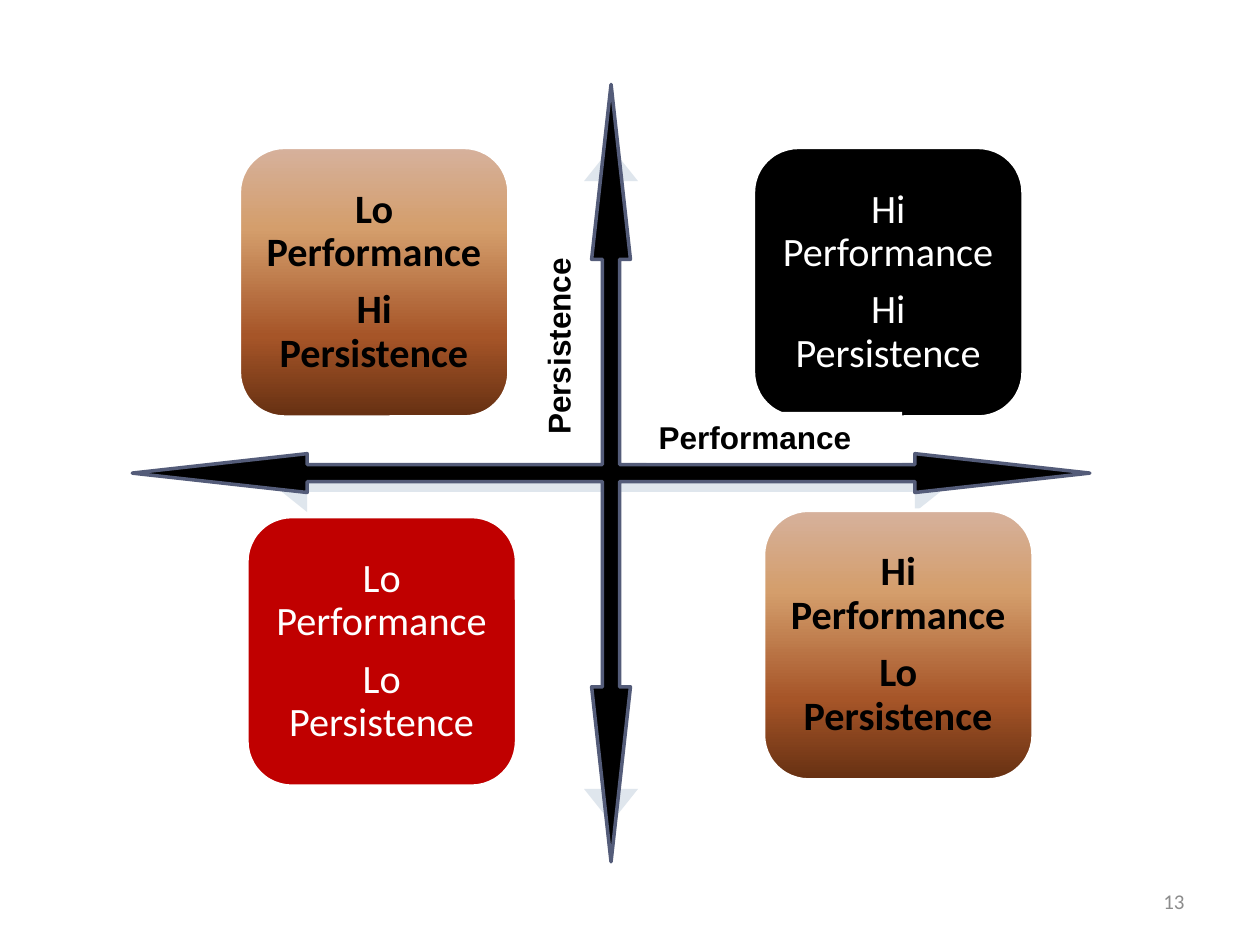
import pptx
import pptx.util
import pptx.dml.color
import pptx.enum.shapes
import pptx.enum.text
import pptx.oxml
import pptx.oxml.ns

COLS, ROWS = 100, 75
WIDTH, HEIGHT = pptx.util.Inches(10), pptx.util.Inches(7.5)
CARD = 21.4
BRONZE = [(0, "D6B19C"), (30, "D49E6C"), (70, "A65528"), (100, "663012")]
SHAPE = pptx.enum.shapes.MSO_SHAPE
ALIGN = pptx.enum.text.PP_ALIGN
ANCHOR = pptx.enum.text.MSO_ANCHOR


def rgb(value):
    return pptx.dml.color.RGBColor.from_string(value)


def place(col, row, cols, rows):
    return (round(col * WIDTH / COLS), round(row * HEIGHT / ROWS),
            round(cols * WIDTH / COLS), round(rows * HEIGHT / ROWS))


def fill_gradient(sp, stops):
    sp.fill.gradient()
    sp.fill.gradient_angle = 270
    gs_list = sp._element.spPr.find(".//" + pptx.oxml.ns.qn("a:gsLst"))
    for gs in list(gs_list):
        gs_list.remove(gs)
    for position, color in stops:
        gs_list.append(pptx.oxml.parse_xml(
            f'<a:gs {pptx.oxml.ns.nsdecls("a")} pos="{position * 1000}">'
            f'<a:srgbClr val="{color}"/></a:gs>'))


def add_shape(s, kind, area, fill, line=None, adjustments=()):
    sp = s.shapes.add_shape(kind, *place(*area))
    sp.shadow.inherit = False
    for i, value in enumerate(adjustments):
        sp.adjustments[i] = value
    if isinstance(fill, list):
        fill_gradient(sp, fill)
    else:
        sp.fill.solid()
        sp.fill.fore_color.rgb = rgb(fill)
    if line:
        sp.line.color.rgb = rgb(line)
        sp.line.width = pptx.util.Pt(2)
    else:
        sp.line.fill.background()
    return sp


def add_run(p, text, size, font, color, bold=False):
    r = p.add_run()
    r.text = text
    r.font.size = pptx.util.Pt(size)
    r.font.name = font
    r.font.bold = bold
    r.font.color.rgb = rgb(color)


def add_card(s, col, row, fill, color, bold, lines):
    sp = add_shape(s, SHAPE.ROUNDED_RECTANGLE, (col, row, CARD, CARD), fill, "FFFFFF")
    tf = sp.text_frame
    tf.word_wrap = True
    tf.vertical_anchor = ANCHOR.MIDDLE
    tf.margin_left = tf.margin_right = pptx.util.Inches(0.1)
    tf.margin_top = tf.margin_bottom = pptx.util.Inches(0.1)
    for i, line in enumerate(lines):
        p = tf.add_paragraph() if i else tf.paragraphs[0]
        p.alignment = ALIGN.CENTER
        p.line_spacing = 0.9
        p.space_after = pptx.util.Pt(8)
        add_run(p, line, 23, "Calibri", color, bold)


def add_label(s, area, text, size, font, color, bold=False, align=ALIGN.LEFT,
              anchor=ANCHOR.TOP, fill=None, vertical=False):
    sp = s.shapes.add_textbox(*place(*area))
    if fill:
        sp.fill.solid()
        sp.fill.fore_color.rgb = rgb(fill)
    tf = sp.text_frame
    tf.word_wrap = True
    tf.vertical_anchor = anchor
    if vertical:
        tf._txBody.bodyPr.set("vert", "vert270")
    p = tf.paragraphs[0]
    p.alignment = align
    add_run(p, text, size, font, color, bold)


def main():
    prs = pptx.Presentation()
    prs.slide_width, prs.slide_height = WIDTH, HEIGHT
    s = prs.slides.add_slide(prs.slide_layouts[6])

    add_shape(s, SHAPE.QUAD_ARROW, (21.7, 11.7, 53.6, 53.6), "DFE6ED",
              adjustments=(0.02, 0.04, 0.05))
    cards = [
        (19, 11.7, BRONZE, "000000", True, "Lo", "Hi"),
        (59.8, 11.7, "000000", "FFFFFF", False, "Hi", "Hi"),
        (19.6, 41, "C00000", "FFFFFF", False, "Lo", "Lo"),
        (60.6, 40.5, BRONZE, "000000", True, "Hi", "Lo"),
    ]
    for col, row, fill, color, bold, performance, persistence in cards:
        add_card(s, col, row, fill, color, bold,
                 [f"{performance} Performance", f"{persistence} Persistence"])

    add_shape(s, SHAPE.QUAD_ARROW, (10.5, 6.7, 76, 61.7), "000000", "545C79",
              (0.022, 0.025, 0.225))
    add_label(s, (51.3, 32.7, 20.3, 4), "Performance", 18, "Arial", "000000",
              bold=True, fill="FFFFFF")
    add_label(s, (42.3, 19.2, 5, 16.3), "Persistence", 18, "Arial", "000000",
              bold=True, vertical=True)
    add_label(s, (71.7, 69.5, 23.3, 4), "13", 12, "Calibri", "8C8C8C",
              align=ALIGN.RIGHT, anchor=ANCHOR.MIDDLE)
    prs.save("out.pptx")


if __name__ == "__main__":
    main()
